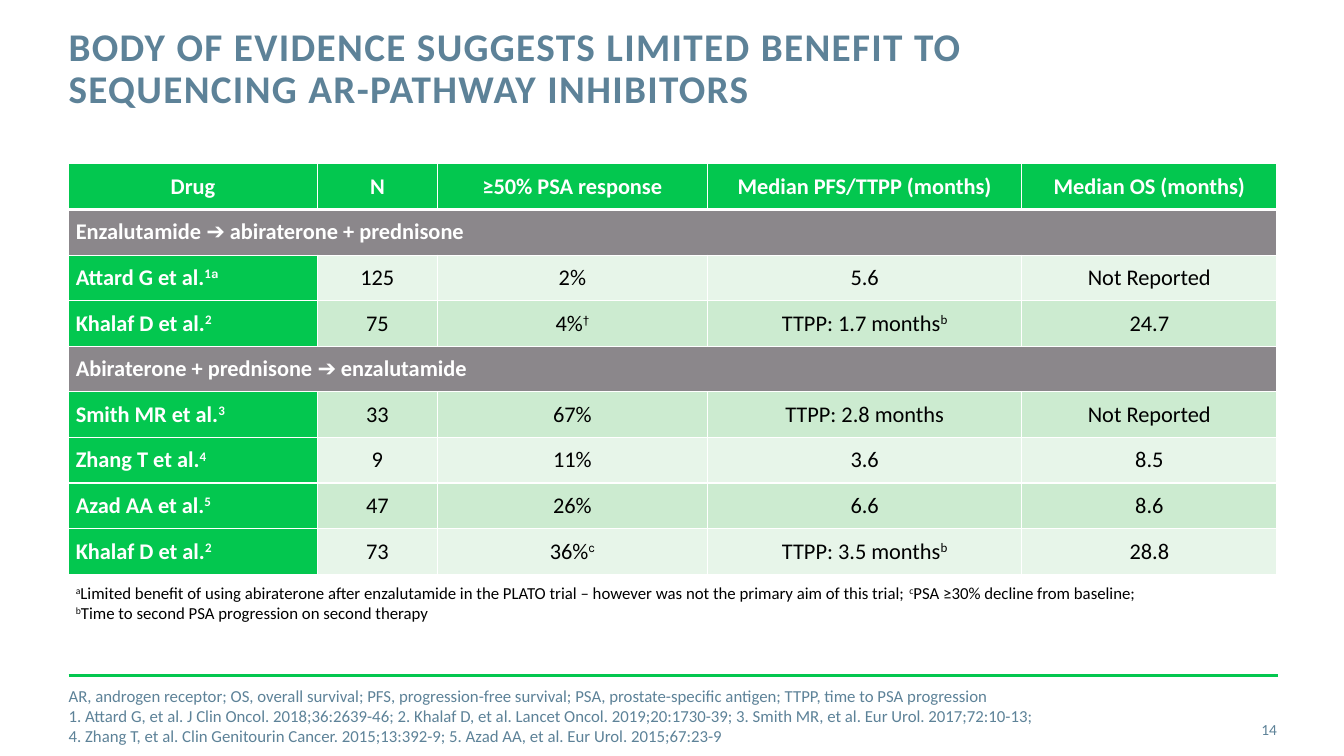
from lxml import etree
from pptx import Presentation
from pptx.dml.color import RGBColor
from pptx.enum.shapes import MSO_CONNECTOR
from pptx.enum.text import MSO_ANCHOR, PP_ALIGN
from pptx.oxml.ns import qn
from pptx.util import Cm, Pt

STRAIGHT = MSO_CONNECTOR.STRAIGHT
TOP, MIDDLE = MSO_ANCHOR.TOP, MSO_ANCHOR.MIDDLE
LEFT, CENTER, RIGHT = PP_ALIGN.LEFT, PP_ALIGN.CENTER, PP_ALIGN.RIGHT

GREEN, GREY, SLATE = "03C74F", "8B878B", "5D8298"
WHITE, BLACK = "FFFFFF", "000000"
STRIPES = ["E7F5E9", "CCEBD0"]
FONT, MARK_FONT = "Calibri", "Karla"
MARGIN = 1.73
COLUMN_WIDTHS = [6.27, 3.02, 6.81, 7.92, 6.43]
ROW_HEIGHT = 1.15

TITLE = "BODY OF EVIDENCE SUGGESTS LIMITED BENEFIT TO SEQUENCING AR-PATHWAY INHIBITORS"
STUDIES = [
    ["Drug", "N", "≥50% PSA response", "Median PFS/TTPP (months)", "Median OS (months)"],
    ["Enzalutamide ➔ abiraterone + prednisone"],
    ["Attard G et al.^1^^a", "125", "2%", "5.6", "Not Reported"],
    ["Khalaf D et al.^2", "75", "4%^†", "TTPP: 1.7 months^b", "24.7"],
    ["Abiraterone + prednisone ➔ enzalutamide"],
    ["Smith MR et al.^3", "33", "67%", "TTPP: 2.8 months", "Not Reported"],
    ["Zhang T et al.^4", "9", "11%", "3.6", "8.5"],
    ["Azad AA et al.^5", "47", "26%", "6.6", "8.6"],
    ["Khalaf D et al.^2", "73", "36%^c", "TTPP: 3.5 months^b", "28.8"],
]
FOOTNOTE = (
    "^a^Limited benefit of using abiraterone after enzalutamide in the PLATO trial – "
    "however was not the primary aim of this trial; ^c^PSA ≥30% decline from baseline; "
    "\n^b^Time to second PSA progression on second therapy"
)
REFERENCES = [
    "AR, androgen receptor; OS, overall survival; PFS, progression-free survival; "
    "PSA, prostate-specific antigen; TTPP, time to PSA progression",
    "1. Attard G, et al. J Clin Oncol. 2018;36:2639-46; 2. Khalaf D, et al. Lancet Oncol. "
    "2019;20:1730-39; 3. Smith MR, et al. Eur Urol. 2017;72:10-13; "
    "\n4. Zhang T, et al. Clin Genitourin Cancer. 2015;13:392-9; "
    "5. Azad AA, et al. Eur Urol. 2015;67:23-9",
]


def rgb(value):
    return RGBColor.from_string(value)


def style_span(span, size, color, bold, font=FONT):
    span.font.size = Pt(size)
    span.font.color.rgb = rgb(color)
    span.font.bold = bold
    span.font.name = font


def write_para(para, text, size, color, bold=False, align=LEFT, special_marks=""):
    para.alignment = align
    for line_number, line in enumerate(text.split("\n")):
        if line_number:
            para.add_line_break()
        for position, piece in enumerate(line.split("^")):
            if not piece:
                continue
            span = para.add_run()
            span.text = piece
            raised = position % 2 == 1
            font = MARK_FONT if raised and piece in special_marks else FONT
            style_span(span, size, color, bold, font)
            if raised:
                span.font._element.set("baseline", "30000")
    for line_break in para._p.findall(qn("a:br")):
        etree.SubElement(line_break, qn("a:rPr")).set("sz", str(size * 100))


def add_text(page, left, top, width, height, lines, size, bold=False, align=LEFT, anchor=MIDDLE):
    box = page.shapes.add_textbox(Cm(left), Cm(top), Cm(width), Cm(height))
    frame = box.text_frame
    frame.word_wrap = True
    frame.vertical_anchor = anchor
    frame.margin_left = frame.margin_right = frame.margin_top = frame.margin_bottom = 0
    for number, line in enumerate(lines):
        para = frame.add_paragraph() if number else frame.paragraphs[0]
        write_para(para, line, size, SLATE, bold, align)
    return frame


def add_title(page):
    frame = add_text(page, MARGIN, 0.69, 24.28, 2.24, [TITLE], 28, bold=True, anchor=TOP)
    para = frame.paragraphs[0]
    para.line_spacing = Pt(30)
    para.runs[0].font._element.set("spc", "100")


def add_rule(page):
    rule = page.shapes.add_connector(STRAIGHT, Cm(MARGIN), Cm(17.02), Cm(32.21), Cm(17.02))
    rule.line.color.rgb = rgb(GREEN)
    rule.line.width = Pt(2)
    etree.SubElement(rule._element.spPr, qn("a:effectLst"))


def set_borders(cell, top, bottom):
    properties = cell._tc.get_or_add_tcPr()
    for side, width in {"lnL": 1, "lnR": 1, "lnT": top, "lnB": bottom}.items():
        border = etree.SubElement(properties, qn("a:" + side), w=str(Pt(width)))
        fill = etree.SubElement(border, qn("a:solidFill"))
        etree.SubElement(fill, qn("a:srgbClr"), val=WHITE)


def prepare_cell(cell, row, fill):
    cell.vertical_anchor = MIDDLE
    cell.margin_left = cell.margin_right = Cm(0.18)
    cell.margin_top = cell.margin_bottom = Cm(0.23)
    set_borders(cell, top=3 if row == 1 else 1, bottom=3 if row == 0 else 1)
    if fill:
        cell.fill.solid()
        cell.fill.fore_color.rgb = rgb(fill)
    else:
        cell.fill.background()


def row_fill(row, column, spanning):
    if spanning:
        return GREY
    if row == 0 or column == 0:
        return GREEN
    return STRIPES[row % 2]


def add_studies_table(page):
    footnote_row = len(STUDIES)
    column_count = len(COLUMN_WIDTHS)
    table = page.shapes.add_table(
        footnote_row + 1, column_count, Cm(MARGIN), Cm(4.13),
        Cm(sum(COLUMN_WIDTHS)), Cm(ROW_HEIGHT * footnote_row + 1.32),
    ).table
    table.first_row = table.horz_banding = False
    for column, width in zip(table.columns, COLUMN_WIDTHS):
        column.width = Cm(width)
    for row, values in enumerate(STUDIES):
        table.rows[row].height = Cm(ROW_HEIGHT)
        spanning = len(values) == 1
        if spanning:
            table.cell(row, 0).merge(table.cell(row, column_count - 1))
        for column in range(column_count):
            prepare_cell(table.cell(row, column), row, row_fill(row, column, spanning))
        for column, text in enumerate(values):
            heading = row == 0 or column == 0
            write_para(
                table.cell(row, column).text_frame.paragraphs[0], text, 16,
                WHITE if heading else BLACK, heading,
                CENTER if row == 0 or column else LEFT, special_marks="a†c",
            )
    table.rows[footnote_row].height = Cm(1.32)
    footnote = table.cell(footnote_row, 0)
    footnote.merge(table.cell(footnote_row, column_count - 1))
    for column in range(column_count):
        prepare_cell(table.cell(footnote_row, column), footnote_row, None)
    write_para(footnote.text_frame.paragraphs[0], FOOTNOTE, 12, BLACK)


def main():
    deck = Presentation()
    deck.slide_width, deck.slide_height = Cm(33.87), Cm(19.05)
    page = deck.slides.add_slide(deck.slide_layouts[6])
    add_rule(page)
    add_title(page)
    add_text(page, 30, 17.86, 2.18, 1.02, ["14"], 11, align=RIGHT)
    add_text(page, MARGIN, 17.53, 29.46, 1.02, REFERENCES, 12)
    add_studies_table(page)
    deck.save("out.pptx")


if __name__ == "__main__":
    main()
